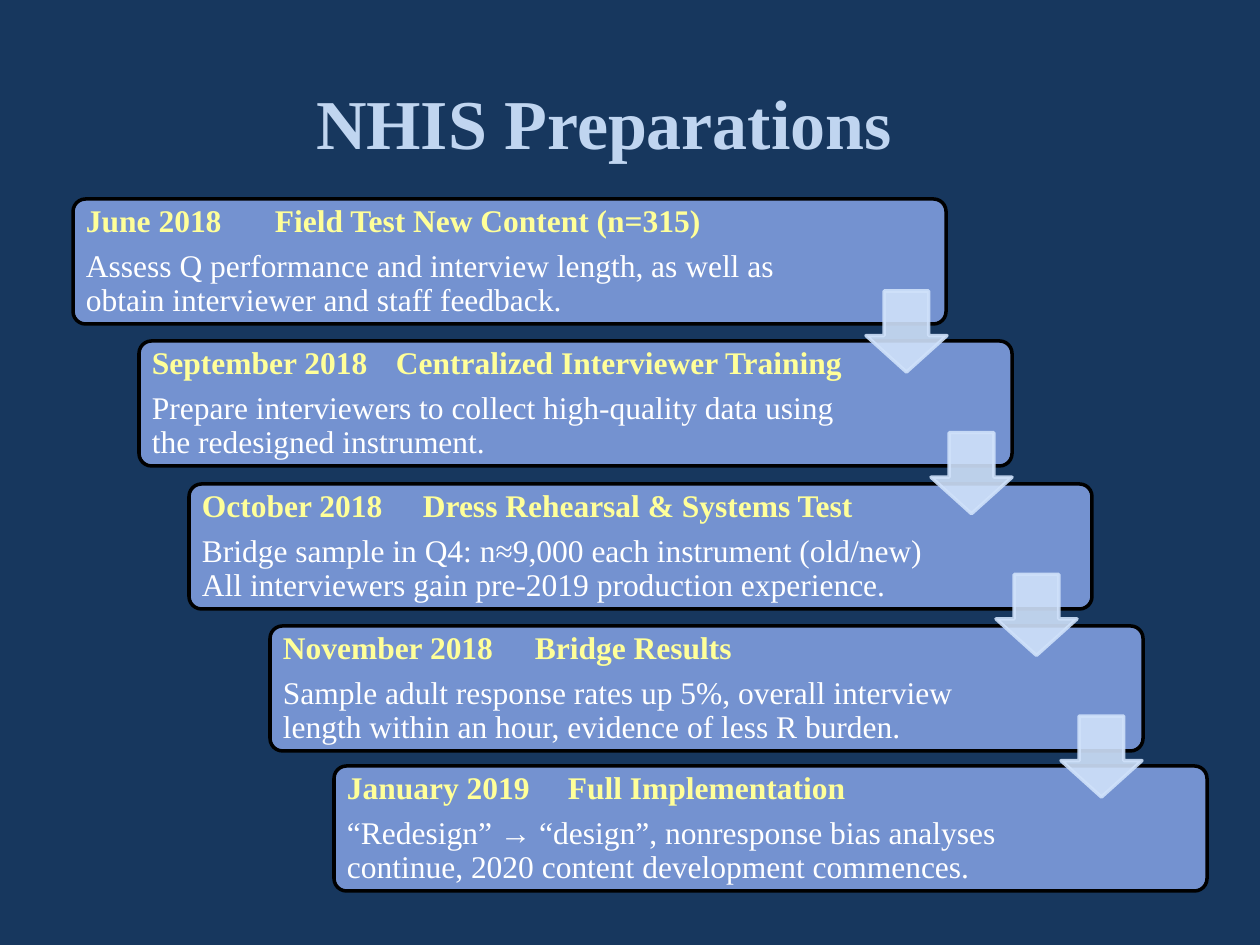
"""Build the NHIS Preparations slide: a staircase of five dated steps."""
from pptx import Presentation
from pptx.dml.color import RGBColor
from pptx.enum.shapes import MSO_SHAPE
from pptx.enum.text import MSO_ANCHOR, PP_ALIGN
from pptx.oxml.ns import qn
from pptx.util import Emu, Pt
from lxml import etree

ROUNDED, ARROW = MSO_SHAPE.ROUNDED_RECTANGLE, MSO_SHAPE.DOWN_ARROW
MIDDLE, CENTER, LEFT = MSO_ANCHOR.MIDDLE, PP_ALIGN.CENTER, PP_ALIGN.LEFT

SCALE = 914400 / 126
FONT = "Times New Roman"
COLORS = {"background": "17375E", "title": "C0D5F0", "box": "7492D0", "outline": "000000",
          "heading": "FFFF99", "body": "FFFFFF", "arrow": "CFE1FA"}
TITLE = "NHIS Preparations"
STEPS = [
    {"date": "June 2018", "name": "Field Test New Content (n=315)",
     "body": "Assess Q performance and interview length, as well as obtain interviewer and staff feedback.",
     "box": (73, 199, 873), "text_width": 725, "tab": 189},
    {"date": "September 2018", "name": "Centralized Interviewer Training",
     "body": "Prepare interviewers to collect high-quality data using the redesigned instrument.",
     "box": (139, 341, 873), "text_width": 719, "tab": 244},
    {"date": "October 2018", "name": "Dress Rehearsal & Systems Test",
     "body": "Bridge sample in Q4: n≈9,000 each instrument (old/new) "
             "All interviewers gain pre-2019 production experience.",
     "box": (189, 484, 903), "text_width": 745, "tab": 221},
    {"date": "November 2018", "name": "Bridge Results",
     "body": "Sample adult response rates up 5%, overall interview length within an hour, "
             "evidence of less R burden.",
     "box": (270, 626, 873), "text_width": 719, "tab": 252},
    {"date": "January 2019", "name": "Full Implementation",
     "body": "“Redesign” → “design”, nonresponse bias analyses continue, "
             "2020 content development commences.",
     "box": (334, 766, 873), "text_width": 719, "tab": 221},
]
BOX_HEIGHT, TEXT_INSET, TEXT_MARGIN = 125, 4, 9
ARROW_LEFT, ARROW_TOP, ARROW_SIZE, ARROW_SHIFT = 866, 291, 81, 65
ARROW_DROP = 425 / 3


def px(value):
    return Emu(round(value * SCALE))


def color(name):
    return RGBColor.from_string(COLORS[name])


def add_shape(slide, kind, bounds, adjustments, fill, line):
    shape = slide.shapes.add_shape(kind, *map(px, bounds))
    shape.shadow.inherit = False
    for index, value in enumerate(adjustments):
        shape.adjustments[index] = value
    shape.fill.solid()
    shape.fill.fore_color.rgb = color(fill)
    shape.line.color.rgb = color(line)
    shape.line.width = Pt(2)
    return shape


def add_text_frame(slide, bounds, margin):
    frame = slide.shapes.add_textbox(*map(px, bounds)).text_frame
    frame.word_wrap = True
    frame.vertical_anchor = MIDDLE
    frame.margin_left = frame.margin_right = px(margin)
    frame.margin_top = frame.margin_bottom = px(margin)
    return frame


def add_run(paragraph, text, size, fill, bold):
    run = paragraph.add_run()
    run.text = text
    run.font.name = FONT
    run.font.size = Pt(size)
    run.font.bold = bold
    run.font.color.rgb = color(fill)


def add_step(slide, step):
    left, top, width = step["box"]
    add_shape(slide, ROUNDED, (left, top, width, BOX_HEIGHT), [0.1], "box", "outline")
    frame = add_text_frame(slide, (left + TEXT_INSET, top + TEXT_INSET, step["text_width"],
                                   BOX_HEIGHT - 2 * TEXT_INSET), TEXT_MARGIN)
    heading, body = frame.paragraphs[0], frame.add_paragraph()
    for paragraph in (heading, body):
        paragraph.alignment = LEFT
        paragraph.line_spacing = 0.9
        paragraph.space_after = Pt(6.3)
    properties = heading._p.get_or_add_pPr()
    properties.set("marL", str(px(step["tab"])))
    properties.set("indent", str(-px(step["tab"])))
    add_run(heading, f"{step['date']}\t{step['name']}", 18, "heading", True)
    add_run(body, step["body"], 18, "body", False)


def add_arrow(slide, index):
    bounds = (ARROW_LEFT + index * ARROW_SHIFT, ARROW_TOP + index * ARROW_DROP,
              ARROW_SIZE, ARROW_SIZE)
    arrow = add_shape(slide, ARROW, bounds, [0.55, 0.45], "arrow", "arrow")
    for fill in arrow._element.spPr.iter(qn("a:srgbClr")):
        etree.SubElement(fill, qn("a:alpha")).set("val", "90000")


def main():
    presentation = Presentation()
    presentation.slide_width, presentation.slide_height = px(1260), px(945)
    slide = presentation.slides.add_slide(presentation.slide_layouts[6])
    slide.background.fill.solid()
    slide.background.fill.fore_color.rgb = color("background")
    title = add_text_frame(slide, (84, 42, 1040, 158), 6).paragraphs[0]
    title.alignment = CENTER
    add_run(title, TITLE, 40, "title", True)
    for step in STEPS:
        add_step(slide, step)
    for index in range(len(STEPS) - 1):
        add_arrow(slide, index)
    presentation.save("out.pptx")


if __name__ == "__main__":
    main()
